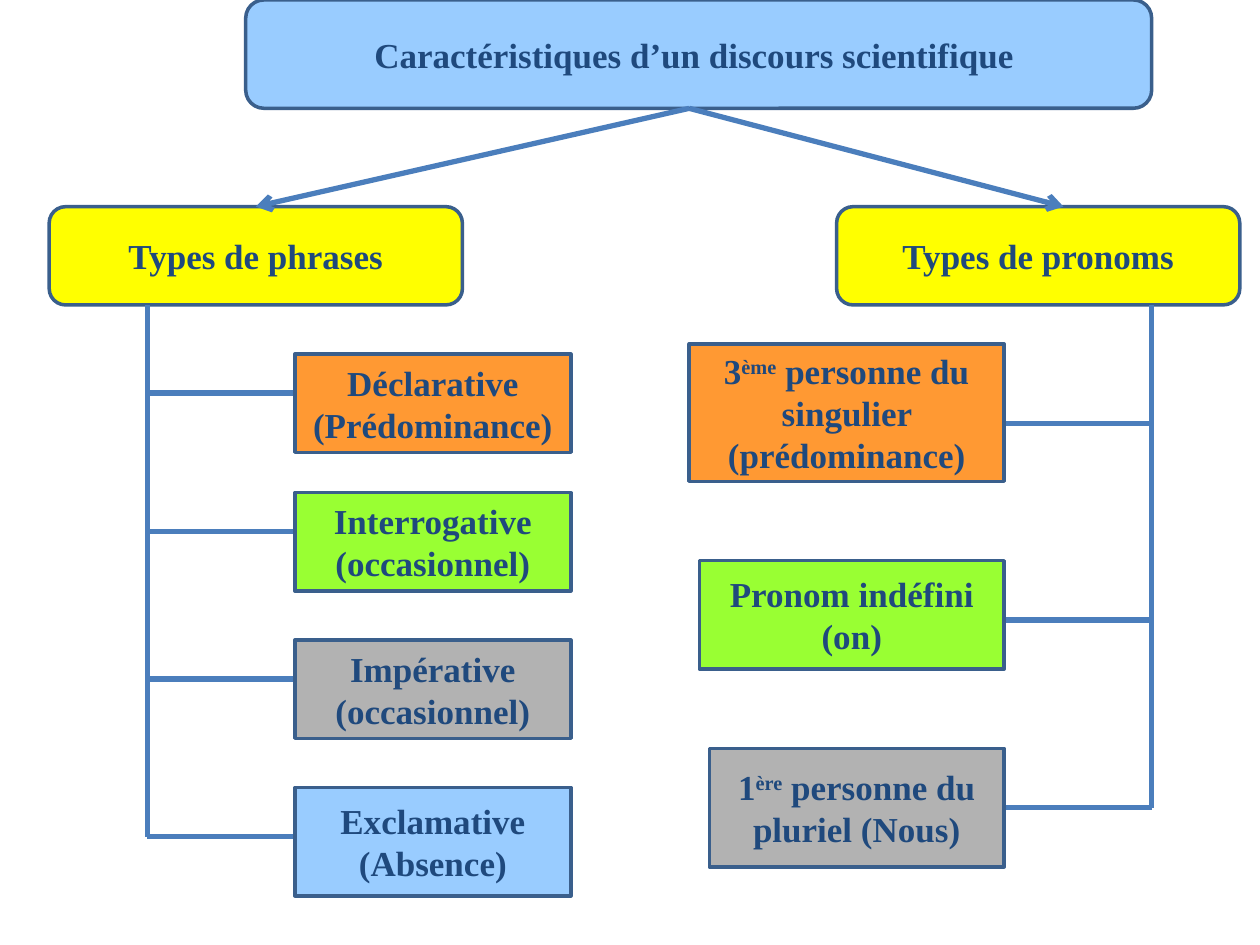
from lxml.etree import SubElement
from pptx import Presentation
from pptx.dml.color import RGBColor
from pptx.enum.shapes import MSO_CONNECTOR, MSO_SHAPE
from pptx.enum.text import MSO_ANCHOR, PP_ALIGN
from pptx.oxml.ns import qn
from pptx.util import Inches, Pt

BLUE = RGBColor(0x99, 0xCC, 0xFF)
YELLOW = RGBColor(0xFF, 0xFF, 0x00)
ORANGE = RGBColor(0xFF, 0x99, 0x33)
GREEN = RGBColor(0x99, 0xFF, 0x33)
GRAY = RGBColor(0xB2, 0xB2, 0xB2)
BORDER = RGBColor(0x3A, 0x5F, 0x8C)
LINK = RGBColor(0x4B, 0x7E, 0xBC)
NAVY = RGBColor(0x1F, 0x49, 0x7D)

FONT = {"name": "Times New Roman", "size": Pt(20), "bold": True}
TOP, BOTTOM_OF_HEADS = 1.64, 2.42
FORK = (5.47, 0.86)
SENTENCE_TRUNK, SENTENCE_LEFT, SENTENCE_WIDTH = 1.17, 2.34, 2.19
PRONOUN_TRUNK, PRONOUN_RIGHT = 9.14, 7.97

# Top, height, branch height, fill, lines of text
SENTENCES = [
    (2.81, 0.78, 3.12, ORANGE, ["Déclarative", "(Prédominance)"]),
    (3.91, 0.78, 4.22, GREEN, ["Interrogative", "(occasionnel)"]),
    (5.08, 0.78, 5.39, GRAY, ["Impérative", "(occasionnel)"]),
    (6.25, 0.86, 6.64, BLUE, ["Exclamative", "(Absence)"]),
]
# Left, top, height, branch height, fill, text
PRONOUNS = [
    (5.47, 2.73, 1.09, 3.36, ORANGE, "3^ème^ personne du singulier (prédominance)"),
    (5.55, 4.45, 0.86, 4.92, GREEN, "Pronom indéfini (on)"),
    (5.63, 5.94, 0.94, 6.41, GRAY, "1^ère^ personne du pluriel (Nous)"),
]


def add_text(p, text):
    """Fill a paragraph; parts between ^ marks are superscript."""
    p.alignment = PP_ALIGN.CENTER
    for i, part in enumerate(text.split("^")):
        r = p.add_run()
        r.text = part
        for name, value in FONT.items():
            setattr(r.font, name, value)
        r.font.color.rgb = NAVY
        if i % 2:
            r.font._element.set("baseline", "30000")


def add_box(slide, kind, left, top, width, height, fill, lines):
    sp = slide.shapes.add_shape(kind, *map(Inches, (left, top, width, height)))
    sp.shadow.inherit = False
    sp.fill.solid()
    sp.fill.fore_color.rgb = fill
    sp.line.color.rgb = BORDER
    sp.line.width = Pt(2)
    tf = sp.text_frame
    tf.word_wrap = True
    tf.vertical_anchor = MSO_ANCHOR.MIDDLE
    for i, line in enumerate(lines):
        add_text(tf.add_paragraph() if i else tf.paragraphs[0], line)
    return sp


def add_line(slide, start, end, arrow=False):
    line = slide.shapes.add_connector(
        MSO_CONNECTOR.STRAIGHT, *map(Inches, (*start, *end)))
    line.line.color.rgb = LINK
    line.line.width = Pt(3)
    if arrow:
        SubElement(line.line._get_or_add_ln(), qn("a:tailEnd"), type="arrow")
    SubElement(line._element.spPr, qn("a:effectLst"))
    return line


def add_heads(slide):
    rounded = MSO_SHAPE.ROUNDED_RECTANGLE
    add_box(slide, rounded, 1.95, 0, 7.19, 0.86, BLUE,
            ["Caractéristiques d’un discours scientifique "])
    height = BOTTOM_OF_HEADS - TOP
    sentences = add_box(slide, rounded, 0.39, TOP, 3.28, height, YELLOW,
                        ["Types de phrases"])
    add_box(slide, rounded, 6.64, TOP, 3.2, height, YELLOW, ["Types de pronoms"])
    add_line(slide, FORK, (8.44, TOP), arrow=True)
    add_line(slide, FORK, (2.03, TOP), arrow=True).end_connect(sentences, 0)


def add_trunk(slide, x, bottom):
    add_line(slide, (x, BOTTOM_OF_HEADS), (x, bottom))


def add_sentences(slide):
    add_trunk(slide, SENTENCE_TRUNK, SENTENCES[-1][2])
    for top, height, y, fill, lines in SENTENCES:
        add_line(slide, (SENTENCE_TRUNK, y), (SENTENCE_LEFT, y))
        add_box(slide, MSO_SHAPE.RECTANGLE, SENTENCE_LEFT, top,
                SENTENCE_WIDTH, height, fill, lines)


def add_pronouns(slide):
    add_trunk(slide, PRONOUN_TRUNK, PRONOUNS[-1][3])
    for left, top, height, y, fill, text in PRONOUNS:
        branch = add_line(slide, (PRONOUN_RIGHT, y), (PRONOUN_TRUNK, y))
        box = add_box(slide, MSO_SHAPE.RECTANGLE, left, top,
                      PRONOUN_RIGHT - left, height, fill, [text])
        if abs(top + height / 2 - y) < 0.01:
            branch.begin_connect(box, 3)


def main():
    prs = Presentation()
    prs.slide_width, prs.slide_height = Inches(10), Inches(7.5)
    slide = prs.slides.add_slide(prs.slide_layouts[6])
    add_heads(slide)
    add_sentences(slide)
    add_pronouns(slide)
    prs.save("out.pptx")


if __name__ == "__main__":
    main()
